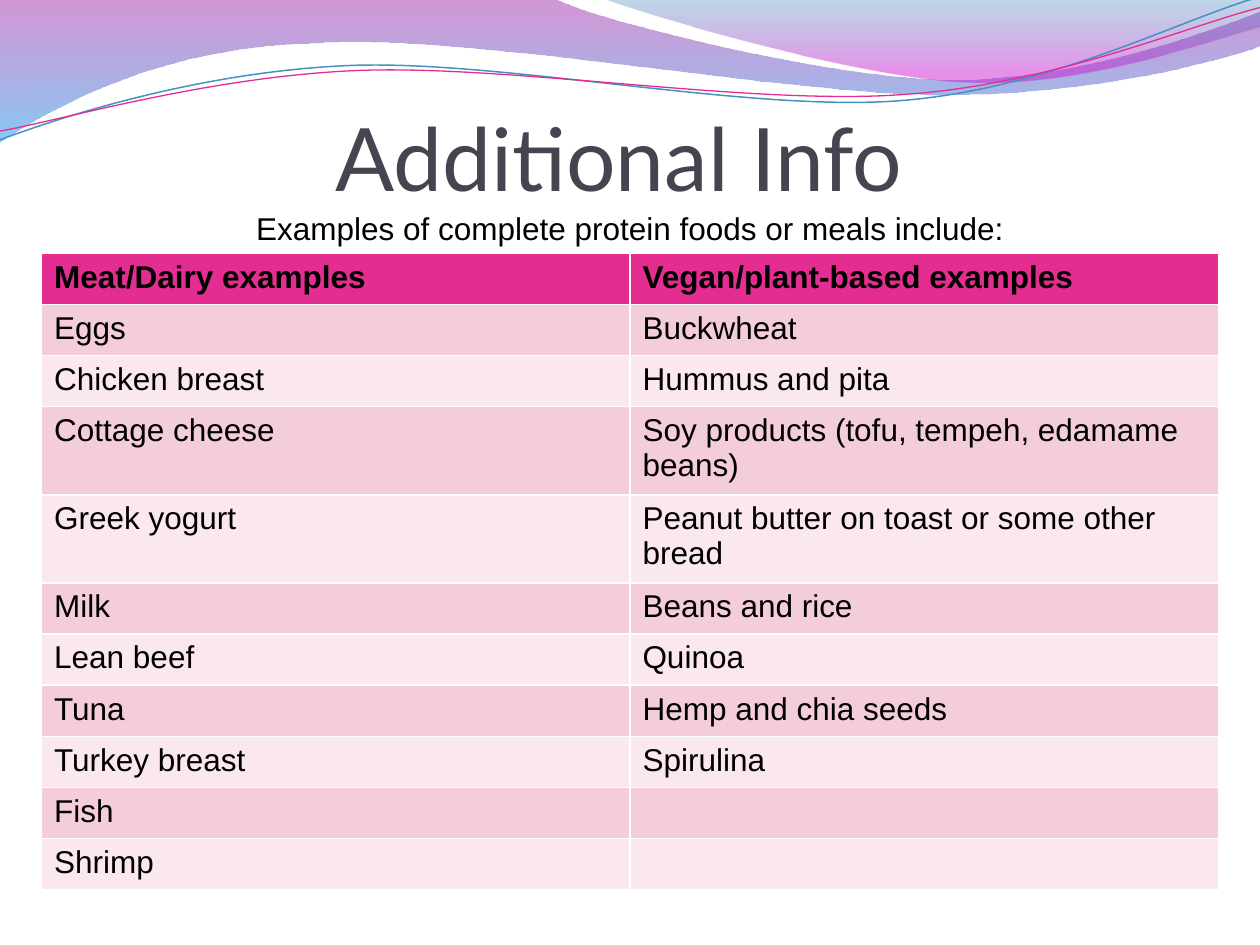
from dataclasses import dataclass
from math import cos, radians, sin

from lxml.etree import SubElement
from pptx import Presentation
from pptx.dml.color import RGBColor as Rgb
from pptx.enum.text import MSO_ANCHOR as Anchor, MSO_AUTO_SIZE as Fit, PP_ALIGN as Align
from pptx.oxml.ns import qn
from pptx.util import Inches, Pt


@dataclass(frozen=True)
class Theme:
    """Colours, fonts and type sizes of the slide."""
    head: str = "E32D91"
    bands: tuple = ("F4CDDC", "FAE8EE")
    ink: str = "000000"
    title: str = "454551"
    blue: str = "4592C2"
    broad: tuple = ((0, "9F18A2", 45), (1, "239FEB", 55))
    corner: tuple = ((0, "2A7FB3", 30), (0.8, "CB0FD0", 45))
    face: str = "Lato"
    body: str = "Arial"
    big: int = 50
    small: int = 18


@dataclass(frozen=True)
class Box:
    """A region of the slide in inches."""
    left: float
    top: float
    width: float
    height: float

    def emu(self):
        """Return the four lengths in slide units."""
        return [Inches(v) for v in (self.left, self.top, self.width, self.height)]


THEME = Theme()
TILT = -2.7

BROAD = [(0, 0), (4.4, -0.01),
         (4.76, 0.17, 6.64, 0.63, 7.58, 0.63), (8.53, 0.63, 9.58, 0.26, 10, 0.09),
         (10.01, 0.36),
         (9.83, 0.44, 8.7, 0.76, 7.46, 0.75), (6.22, 0.75, 3.82, 0.28, 2.57, 0.34),
         (1.29, 0.36, 0.46, 0.83, -0.01, 1.13), (0, 0)]
CORNER = [(4.79, -0.01),
          (5.09, 0.11, 6.82, 0.62, 7.69, 0.65), (8.56, 0.69, 9.61, 0.32, 10, 0.21),
          (10, 0), (4.79, -0.01)]
UPPER = [(0, 1.11), (0.48, 0.93, 1.58, 0.57, 2.77, 0.52),
         (3.95, 0.47, 5.93, 0.89, 7.13, 0.8), (8.33, 0.71, 9.38, 0.15, 9.98, -0.02)]
LOWER = [(0, 1.04), (0.47, 0.96, 1.64, 0.61, 2.83, 0.56),
         (4.03, 0.51, 5.97, 0.84, 7.17, 0.75), (8.36, 0.67, 9.41, 0.21, 10, 0.06)]

HEADS = ("Meat/Dairy examples", "Vegan/plant-based examples")
FOODS = [
    ("Eggs", "Buckwheat"),
    ("Chicken breast", "Hummus and pita"),
    ("Cottage cheese", "Soy products (tofu, tempeh, edamame beans)"),
    ("Greek yogurt", "Peanut butter on toast or some other bread"),
    ("Milk", "Beans and rice"),
    ("Lean beef", "Quinoa"),
    ("Tuna", "Hemp and chia seeds"),
    ("Turkey breast", "Spirulina"),
    ("Fish", ""),
    ("Shrimp", ""),
]
WRAP = 40
TALL = 0.7


def style(para, face, size, color, bold=False):
    """Format every run of a paragraph."""
    for run in para.runs:
        font = run.font
        font.name, font.size, font.bold = face, Pt(size), bold
        font.color.rgb = Rgb.from_string(color)


def turn(dots, box, angle):
    """Rotate points about the middle of a box."""
    mid_x, mid_y = box.left + box.width / 2, box.top + box.height / 2
    c, s = cos(radians(angle)), sin(radians(angle))
    return [(mid_x + (x - mid_x) * c - (y - mid_y) * s,
             mid_y + (x - mid_x) * s + (y - mid_y) * c) for x, y in dots]


def bend(shape, steps):
    """Join each three segments of a curved step into one cubic curve."""
    lines = iter(list(shape.element.iter(qn("a:lnTo"))))
    for step in steps[1:]:
        first = next(lines)
        if len(step) == 6:
            first.tag = qn("a:cubicBezTo")
            for _ in range(2):
                line = next(lines)
                first.append(line[0])
                line.getparent().remove(line)


def draw(slide, steps, close, box=None):
    """Add a freeform of lines and curves, turned back if a box is given."""
    dots = [step[i:i + 2] for step in steps for i in range(0, len(step), 2)]
    if box:
        dots = turn(dots, box, -TILT)
    ends = [(Inches(x), Inches(y)) for x, y in dots]
    pen = slide.shapes.build_freeform(*ends[0])
    pen.add_line_segments(ends[1:], close=close)
    shape = pen.convert_to_shape()
    shape.shadow.inherit = False
    bend(shape, steps)
    return shape


def add_wave(slide, steps, stops):
    """Add a wave filled with a see-through gradient."""
    shape = draw(slide, steps, True)
    shape.line.fill.background()
    fill = shape.fill
    fill.gradient()
    fill.gradient_angle = 270
    for stop, (place, color, _) in zip(fill.gradient_stops, stops):
        stop.position = place
        stop.color.rgb = Rgb.from_string(color)
    for node, (_, _, alpha) in zip(shape.element.iter(qn("a:srgbClr")), stops):
        SubElement(node, qn("a:alpha")).set("val", str(alpha * 1000))


def add_curve(slide, box, steps, color, width):
    """Add a thin tilted curve."""
    shape = draw(slide, steps, False, box)
    shape.rotation = TILT
    shape.fill.background()
    shape.line.color.rgb = Rgb.from_string(color)
    shape.line.width = Pt(width)


def add_title(slide, box):
    """Place the title in front of the waves."""
    title = slide.shapes.title
    slide.shapes.element.append(title.element)
    title.left, title.top, title.width, title.height = box.emu()
    frame = title.text_frame
    frame.text = "Additional Info "
    frame.auto_size = Fit.NONE
    frame.vertical_anchor = Anchor.BOTTOM
    frame.margin_left = frame.margin_right = frame.margin_bottom = 0
    frame.margin_top = Inches(0.05)
    para = frame.paragraphs[0]
    para.alignment = Align.CENTER
    style(para, THEME.face, THEME.big, THEME.title)


def add_intro(slide, box):
    """Place the line that leads into the table."""
    frame = slide.shapes.add_textbox(*box.emu()).text_frame
    frame.word_wrap = True
    frame.auto_size = Fit.SHAPE_TO_FIT_TEXT
    frame.text = "Examples of complete protein foods or meals include:"
    para = frame.paragraphs[0]
    para.alignment = Align.CENTER
    style(para, THEME.body, THEME.small, THEME.ink)


def add_foods(slide, box):
    """Place the table of foods."""
    data = [HEADS] + FOODS
    table = slide.shapes.add_table(len(data), len(HEADS), *box.emu()).table
    tall = [max(map(len, texts)) > WRAP for texts in data]
    low = (box.height - TALL * sum(tall)) / (len(data) - sum(tall))
    for col in table.columns:
        col.width = Inches(box.width / len(HEADS))
    for r, texts in enumerate(data):
        table.rows[r].height = Inches(low)
        color = THEME.bands[(r - 1) % 2] if r else THEME.head
        for c, text in enumerate(texts):
            cell = table.cell(r, c)
            cell.text = text
            style(cell.text_frame.paragraphs[0], THEME.body, THEME.small, THEME.ink, r == 0)
            cell.fill.solid()
            cell.fill.fore_color.rgb = Rgb.from_string(color)


def main():
    """Build and save the slide."""
    deck = Presentation()
    deck.slide_width, deck.slide_height = Inches(10), Inches(7.5)
    slide = deck.slides.add_slide(deck.slide_layouts[5])
    add_wave(slide, BROAD, THEME.broad)
    add_wave(slide, CORNER, THEME.corner)
    add_curve(slide, Box(-0.02, 0.22, 10.02, 0.71), UPPER, THEME.blue, 0.85)
    add_curve(slide, Box(-0.02, 0.3, 10.03, 0.58), LOWER, THEME.head, 0.75)
    add_title(slide, Box(0, 0.41, 10, 1.25))
    add_intro(slide, Box(0, 1.61, 10, 0.4))
    add_foods(slide, Box(0.33, 2.01, 9.34, 5.05))
    deck.save("out.pptx")


if __name__ == "__main__":
    main()
